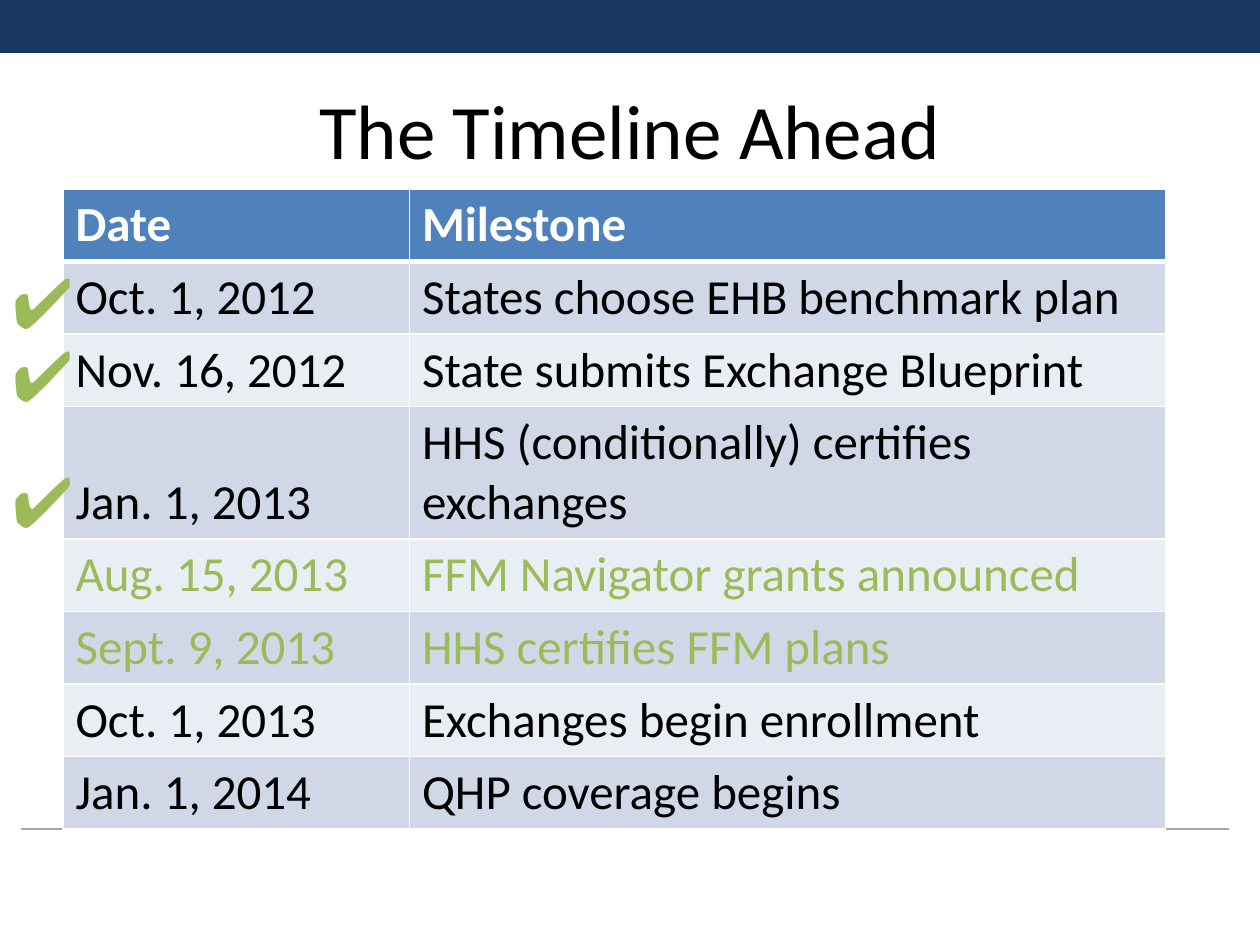
from lxml.etree import SubElement
from pptx import Presentation
from pptx.dml.color import RGBColor
from pptx.enum.shapes import MSO_CONNECTOR as Connector, MSO_SHAPE as Shape
from pptx.enum.text import MSO_ANCHOR as Anchor, MSO_AUTO_SIZE as AutoSize, PP_ALIGN as Align
from pptx.oxml.ns import qn
from pptx.util import Inches, Pt

NAVY = RGBColor(0x17, 0x37, 0x5E)
BLUE = RGBColor(0x4F, 0x81, 0xBD)
GREEN = RGBColor(0x9B, 0xBB, 0x59)
GRAY = RGBColor(0xA6, 0xA6, 0xA6)
BANDS = (RGBColor(0xD0, 0xD8, 0xE8), RGBColor(0xE9, 0xED, 0xF4))
WHITE = RGBColor(0xFF, 0xFF, 0xFF)
BLACK = RGBColor(0, 0, 0)

FONT = "Calibri"
WIDTH, HEIGHT = Inches(10), Inches(7.5)
COLUMNS = (2.75, 6)
ROW, TALL_ROW = 0.56, 0.99
HEADER = ("Date", "Milestone")
MILESTONES = [
    ("Oct. 1, 2012", "States choose EHB benchmark plan", BLACK),
    ("Nov. 16, 2012", "State submits Exchange Blueprint", BLACK),
    ("Jan. 1, 2013", "HHS (conditionally) certifies exchanges", BLACK),
    ("Aug. 15, 2013", "FFM Navigator grants announced", GREEN),
    ("Sept. 9, 2013", "HHS certifies FFM plans", GREEN),
    ("Oct. 1, 2013", "Exchanges begin enrollment", BLACK),
    ("Jan. 1, 2014", "QHP coverage begins", BLACK),
]
TALL_INDEX = 3
CHECK_TOPS = (2, 2.58, 3.58)


def write(frame, text, size, color=BLACK, bold=False, align=Align.LEFT):
    para = frame.paragraphs[0]
    para.alignment = align
    span = para.add_run()
    span.text = text
    span.font.name = FONT
    span.font.size = Pt(size)
    span.font.bold = bold
    span.font.color.rgb = color


def add_bands(page):
    bar = page.shapes.add_shape(Shape.RECTANGLE, 0, 0, WIDTH, Inches(0.42))
    bar.shadow.inherit = False
    bar.fill.solid()
    bar.fill.fore_color.rgb = NAVY
    bar.line.fill.background()
    rule = page.shapes.add_connector(
        Connector.STRAIGHT, Inches(0.17), Inches(6.58), Inches(9.75), Inches(6.58))
    rule.line.color.rgb = GRAY
    rule.line.width = Pt(0.75)
    SubElement(rule._element.spPr, qn("a:effectLst"))


def add_title(page, text):
    title = page.shapes.title
    title.left, title.top = Inches(0.5), Inches(0.5)
    title.width, title.height = Inches(9), Inches(1.05)
    title.text_frame.vertical_anchor = Anchor.MIDDLE
    write(title.text_frame, text, 44, align=Align.CENTER)


def set_borders(cell, top=1, bottom=1):
    properties = cell._tc.get_or_add_tcPr()
    for side, width in (("L", 1), ("R", 1), ("T", top), ("B", bottom)):
        line = SubElement(properties, qn(f"a:ln{side}"), w=str(Pt(width)))
        fill = SubElement(line, qn("a:solidFill"))
        SubElement(fill, qn("a:srgbClr"), val=str(WHITE))


def fill_cell(cell, text, fill, color, anchor, bold=False, **borders):
    set_borders(cell, **borders)
    cell.fill.solid()
    cell.fill.fore_color.rgb = fill
    cell.vertical_anchor = anchor
    write(cell.text_frame, text, 28, color=color, bold=bold)


def add_timeline(page):
    count = len(MILESTONES) + 1
    table = page.shapes.add_table(
        count, len(COLUMNS), Inches(0.5), Inches(1.5),
        Inches(sum(COLUMNS)), Inches(ROW * (count - 1) + TALL_ROW)).table
    for column, width in zip(table.columns, COLUMNS):
        column.width = Inches(width)
    for index, row in enumerate(table.rows):
        row.height = Inches(TALL_ROW if index == TALL_INDEX else ROW)
    for cell, text in zip(table.rows[0].cells, HEADER):
        fill_cell(cell, text, BLUE, WHITE, Anchor.TOP, bold=True, bottom=3)
    for index, (date, milestone, color) in enumerate(MILESTONES):
        for cell, text in zip(table.rows[index + 1].cells, (date, milestone)):
            fill_cell(cell, text, BANDS[index % 2], color, Anchor.BOTTOM,
                      top=1 if index else 3)


def add_check(page, top):
    box = page.shapes.add_textbox(0, Inches(top), Inches(0.76), Inches(0.77))
    box.text_frame.word_wrap = False
    box.text_frame.auto_size = AutoSize.SHAPE_TO_FIT_TEXT
    write(box.text_frame, "✔", 40, color=GREEN)


def main():
    deck = Presentation()
    deck.slide_width, deck.slide_height = WIDTH, HEIGHT
    page = deck.slides.add_slide(deck.slide_layouts[5])
    add_bands(page)
    add_title(page, "The Timeline Ahead")
    add_timeline(page)
    for top in CHECK_TOPS:
        add_check(page, top)
    deck.save("out.pptx")


if __name__ == "__main__":
    main()
